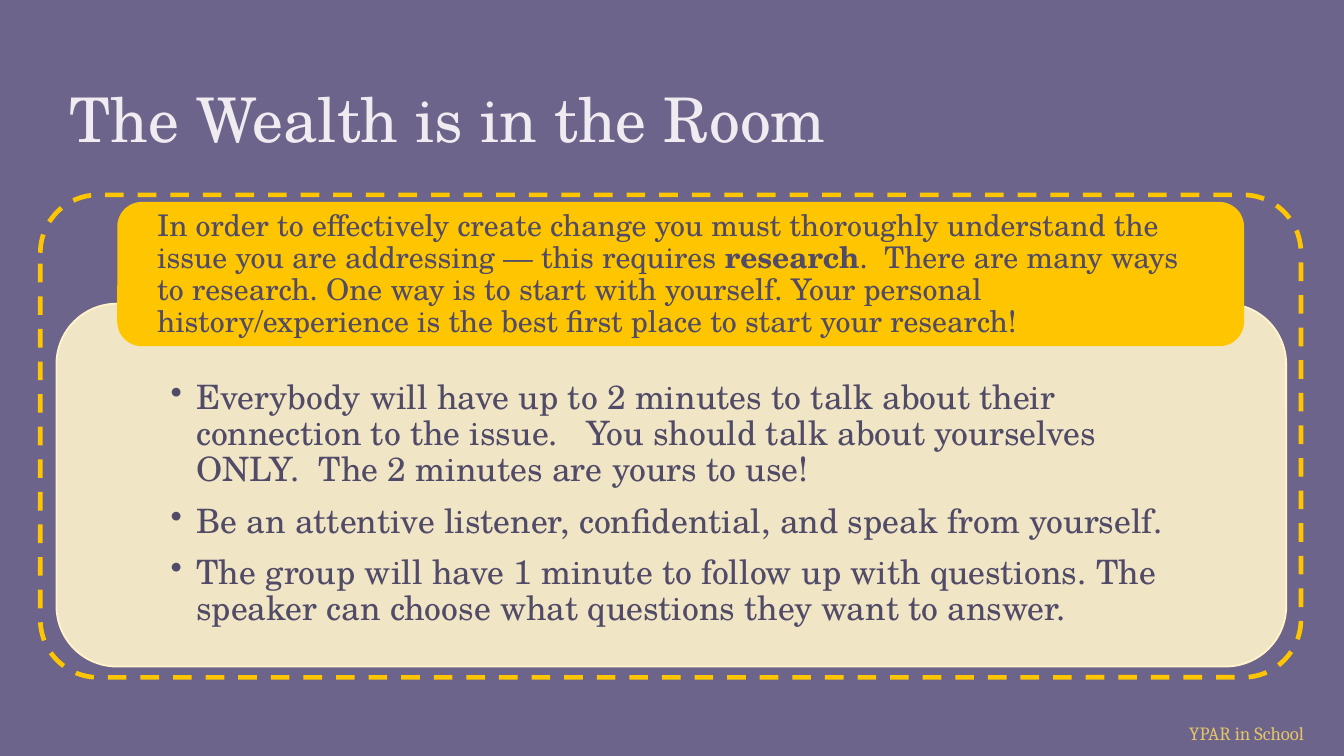
from lxml.etree import SubElement
from pptx import Presentation
from pptx.dml.color import RGBColor
from pptx.enum.dml import MSO_LINE_DASH_STYLE as DASH
from pptx.enum.shapes import MSO_SHAPE as SHAPE
from pptx.enum.text import MSO_ANCHOR as ANCHOR
from pptx.oxml.ns import qn
from pptx.util import Inches, Pt

TITLE = "The Wealth is in the Room"
FOOTER = "YPAR in School"
INTRO = [
    ("In order to effectively create change you must thoroughly understand the issue "
     "you are addressing — this requires ", False),
    ("research", True),
    (".  There are many ways to research. One way is to start with yourself. Your personal "
     "history/experience is the best first place to start your research!", False),
]
RULES = [
    "Everybody will have up to 2 minutes to talk about their connection to the issue.   "
    "You should talk about yourselves ONLY.  The 2 minutes are yours to use!",
    "Be an attentive listener, confidential, and speak from yourself.",
    "The group will have 1 minute to follow up with questions. "
    "The speaker can choose what questions they want to answer.",
]

PURPLE = RGBColor(0x6C, 0x64, 0x8B)
INK = RGBColor(0x51, 0x4B, 0x68)
PALE = RGBColor(0xF0, 0xEB, 0xF0)
CREAM = RGBColor(0xFF, 0xF4, 0xCC)
YELLOW = RGBColor(0xFF, 0xC6, 0x00)
GOLD = RGBColor(0xE4, 0xC4, 0x69)
SERIF = "TeX Gyre Schola"
SLIDE_WIDTH = 10


def add_panel(slide, box, line_color, line_width=1, fill_color=None):
    panel = slide.shapes.add_shape(SHAPE.ROUNDED_RECTANGLE, *map(Inches, box))
    panel.shadow.inherit = False
    panel.line.color.rgb = line_color
    panel.line.width = Pt(line_width)
    if fill_color is None:
        panel.fill.background()
    else:
        panel.fill.solid()
        panel.fill.fore_color.rgb = fill_color
    return panel


def add_text(slide, box, paragraphs, size, color, font=SERIF, insets=(0.1, 0.05, 0.1, 0.05),
             anchor=ANCHOR.TOP, spacing=1.0, after=0, bullet_indent=0, wrap=True):
    frame = slide.shapes.add_textbox(*map(Inches, box)).text_frame
    frame.word_wrap = wrap
    frame.vertical_anchor = anchor
    (frame.margin_left, frame.margin_top,
     frame.margin_right, frame.margin_bottom) = map(Inches, insets)
    for index, runs in enumerate(paragraphs):
        paragraph = frame.add_paragraph() if index else frame.paragraphs[0]
        for text, bold in runs:
            run = paragraph.add_run()
            run.text = text
            if bold:
                run.font.bold = True
        paragraph.line_spacing = spacing
        paragraph.space_after = Pt(after)
        if bullet_indent:
            properties = paragraph._p.get_or_add_pPr()
            properties.set("marL", str(Inches(bullet_indent)))
            properties.set("indent", str(-Inches(bullet_indent)))
            SubElement(properties, qn("a:buChar"), char="•")
        paragraph.font.size = Pt(size)
        paragraph.font.name = font
        paragraph.font.color.rgb = color


presentation = Presentation()
presentation.slide_width = Inches(SLIDE_WIDTH)
presentation.slide_height = Inches(SLIDE_WIDTH * 9 / 16)
slide = presentation.slides.add_slide(presentation.slide_layouts[6])
slide.background.fill.solid()
slide.background.fill.fore_color.rgb = PURPLE

add_text(slide, (8.75, 5.32, 1.15, 0.27), [[(FOOTER, False)]], 10, GOLD,
         font="Cambria", wrap=False)
add_text(slide, (0.42, 0.5, 9.15, 0.75), [[(TITLE, False)]], 33, PALE,
         insets=(0.1,) * 4, anchor=ANCHOR.BOTTOM)

rules_panel = add_panel(slide, (0.42, 2.26, 9.15, 2.7), CREAM, fill_color=CREAM)
fill_element = rules_panel.fill._xPr.find(qn("a:solidFill"))
SubElement(fill_element[0], qn("a:alpha"), val="90000")
add_text(slide, (0.56, 2.4, 8.89, 2.43), [[(rule, False)] for rule in RULES], 18, INK,
         insets=(0.71, 0.43, 0.71, 0.14), spacing=0.9, after=8, bullet_indent=0.19)

add_panel(slide, (0.88, 1.51, 8.37, 1.06), YELLOW, fill_color=YELLOW)
add_text(slide, (0.93, 1.57, 8.27, 0.95), [INTRO], 16, INK,
         insets=(0.24, 0, 0.24, 0), anchor=ANCHOR.MIDDLE, spacing=0.9)

frame_panel = add_panel(slide, (0.3, 1.45, 9.38, 3.59), YELLOW, line_width=2.5)
frame_panel.line.dash_style = DASH.DASH
frame_panel.adjustments[0] = 0.12

presentation.save("out.pptx")
